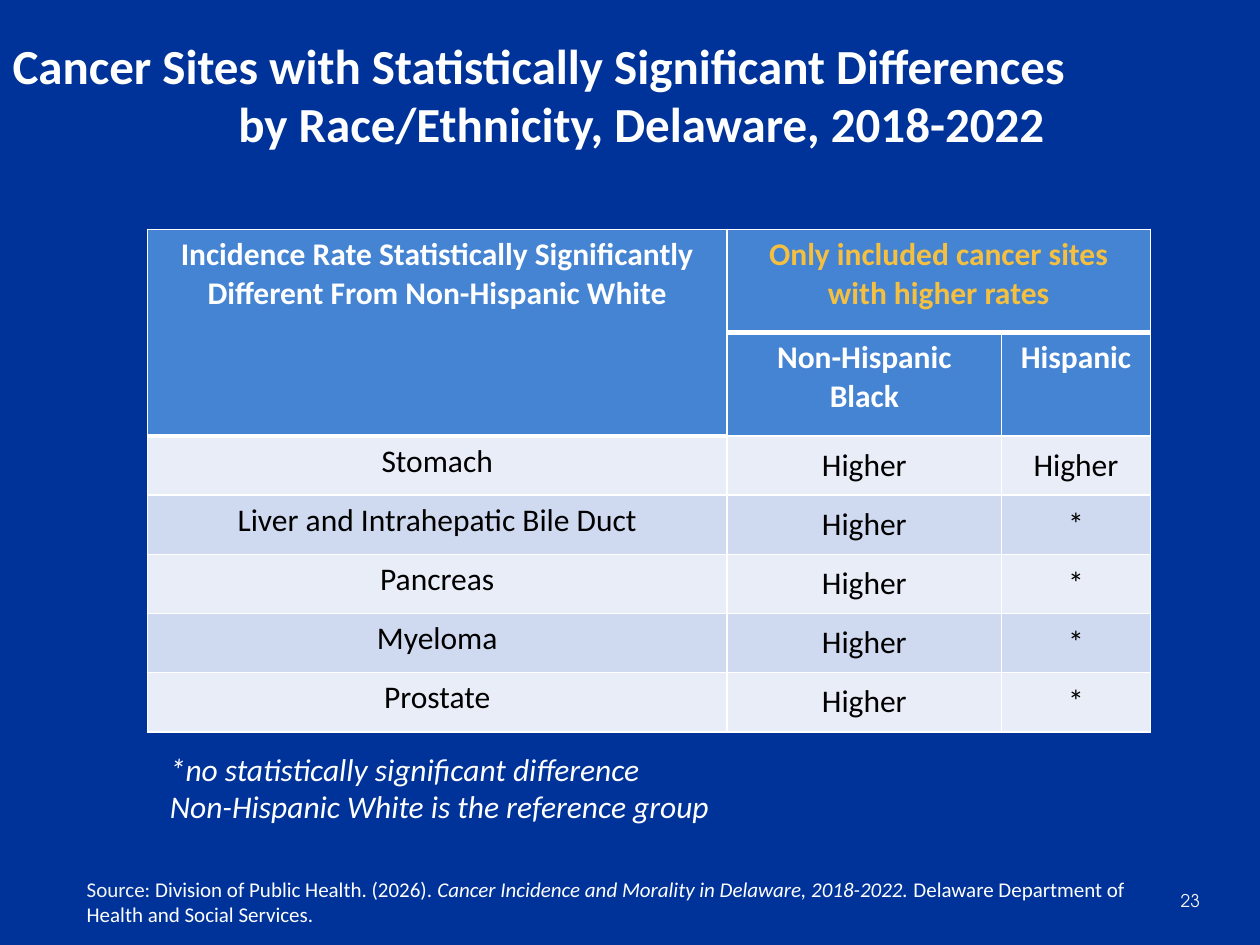
from lxml.etree import SubElement
from pptx import Presentation
from pptx.dml.color import RGBColor as RGB
from pptx.enum.text import MSO_ANCHOR as Anchor, MSO_AUTO_SIZE as AutoSize, PP_ALIGN as Align
from pptx.oxml.ns import qn
from pptx.util import Inches, Pt

COLORS = {"navy": "003399", "white": "FFFFFF", "pale": "F2F2F2", "black": "000000",
          "gold": "F5C040", "header": "4584D3", "light": "E9EDF7", "band": "CFD9EF"}


def add_span(para, text, color, **formats):
    span = para.add_run()
    span.text = text
    for name, value in ({"name": "Calibri", "size": Pt(18)} | formats).items():
        setattr(span.font, name, value)
    span.font.color.rgb = RGB.from_string(COLORS[color])


def add_box(left, top, width, height):
    box = page.shapes.add_textbox(Inches(left), Inches(top), Inches(width), Inches(height))
    box.text_frame.word_wrap = True
    return box.text_frame


deck = Presentation()
deck.slide_width, deck.slide_height = Inches(10), Inches(7.5)
page = deck.slides.add_slide(deck.slide_layouts[5])
page.background.fill.solid()
page.background.fill.fore_color.rgb = RGB.from_string(COLORS["navy"])

title = page.shapes.title
title.left, title.top, title.width, title.height = Inches(0), Inches(0.29), Inches(10), Inches(0.91)
frame = title.text_frame
frame.auto_size = AutoSize.NONE
frame.vertical_anchor = Anchor.MIDDLE
first, second = frame.paragraphs[0], frame.add_paragraph()
first.alignment, second.alignment = Align.LEFT, Align.CENTER
second._p.get_or_add_pPr().set("marL", str(Inches(0.18)))
for para, text in ((first, "Cancer Sites with Statistically Significant Differences"),
                   (second, "by Race/Ethnicity, Delaware, 2018-2022")):
    add_span(para, text, "white", size=Pt(28), bold=True)

frame = add_box(9.34, 6.95, 0.61, 0.4)
frame.vertical_anchor = Anchor.MIDDLE
frame.margin_left, frame.margin_right = Inches(0.03), Inches(0.05)
add_span(frame.paragraphs[0], "23", "pale", name="TeX Gyre Adventor", size=Pt(10))

rows = [
    ("Incidence Rate Statistically Significantly Different From Non-Hispanic White",
     "Only included cancer sites with higher rates", ""),
    ("", "Non-Hispanic Black", "Hispanic"),
    ("Stomach", "Higher", "Higher"),
    ("Liver and Intrahepatic Bile Duct", "Higher", "*"),
    ("Pancreas", "Higher", "*"),
    ("Myeloma", "Higher", "*"),
    ("Prostate", "Higher", "*"),
]
widths = (4.6, 2.18, 1.18)
heights = [0.82] * 2 + [0.47] * 5
thick_below = {(0, 0), (0, 1), (0, 2), (1, 0)}

table = page.shapes.add_table(len(rows), len(widths), Inches(1.17), Inches(1.82),
                              Inches(sum(widths)), Inches(sum(heights))).table
for column, width in zip(table.columns, widths):
    column.width = Inches(width)
for row, height in zip(table.rows, heights):
    row.height = Inches(height)
table.cell(0, 0).merge(table.cell(1, 0))
table.cell(0, 1).merge(table.cell(0, 2))

for r, texts in enumerate(rows):
    is_header = r < 2
    fill = "header" if is_header else ("light", "band")[r % 2]
    for c, text in enumerate(texts):
        cell = table.cell(r, c)
        borders = {"lnL": 1, "lnR": 1,
                   "lnT": 3 if (r - 1, c) in thick_below else 1,
                   "lnB": 3 if (r, c) in thick_below else 1}
        for side, points in borders.items():
            line = SubElement(cell._tc.get_or_add_tcPr(), qn(f"a:{side}"), w=str(Pt(points)))
            SubElement(SubElement(line, qn("a:solidFill")), qn("a:srgbClr"), val=COLORS["white"])
        cell.fill.solid()
        cell.fill.fore_color.rgb = RGB.from_string(COLORS[fill])
        cell.vertical_anchor = Anchor.TOP if is_header or c == 0 else Anchor.MIDDLE
        if text:
            para = cell.text_frame.paragraphs[0]
            para.alignment = Align.CENTER
            color = "gold" if (r, c) == (0, 1) else "white" if is_header else "black"
            add_span(para, text, color, bold=is_header)

frame = add_box(1.25, 5.9, 5, 0.71)
add_span(frame.paragraphs[0], "*no statistically significant difference", "white", italic=True)
add_span(frame.add_paragraph(), "Non-Hispanic White is the reference group", "white", italic=True)

source = add_box(0.59, 6.91, 8.76, 0.5).paragraphs[0]
for text, color, italic in (
        ("Source: ", "pale", False),
        ("Division of Public Health. (2026).", "white", False),
        (" Cancer Incidence and Morality in Delaware, 2018-2022. ", "white", True),
        ("Delaware Department of Health and Social Services.", "white", False)):
    add_span(source, text, color, size=Pt(12), italic=italic)

deck.save("out.pptx")
